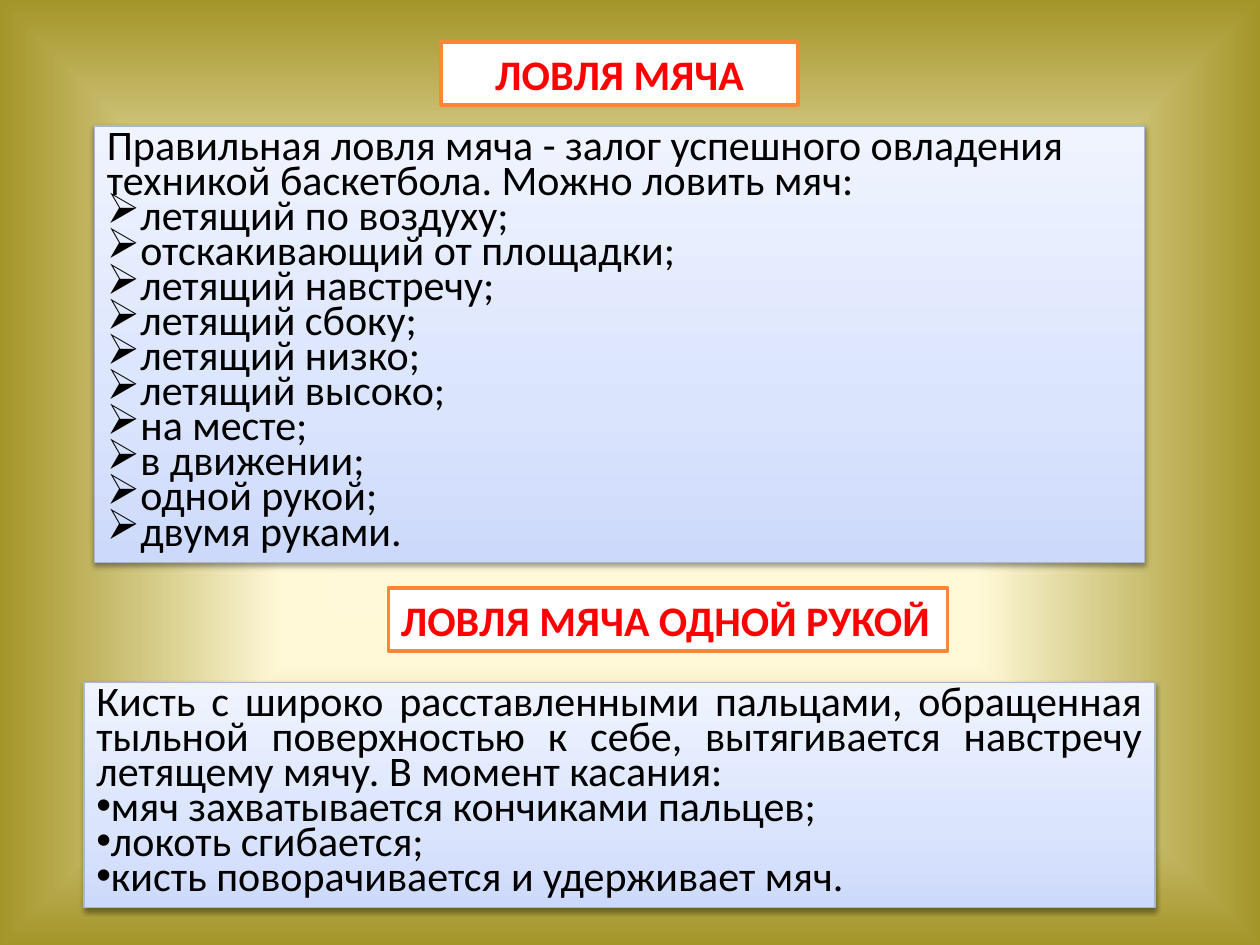
import pptx
import pptx.util
import pptx.oxml
import pptx.oxml.ns
import pptx.dml.color
import pptx.enum.shapes
import pptx.enum.text
from lxml import etree

Pt = pptx.util.Pt
qn = pptx.oxml.ns.qn
ALIGN = pptx.enum.text.PP_ALIGN
ANCHOR = pptx.enum.text.MSO_ANCHOR

COLORS = {
    "title": "FF0000", "title_fill": "FFFFFF", "title_line": "FE8637",
    "text": "000000", "panel_line": "A9B6D1", "shadow": "000000",
}
PANEL_STOPS = [(0, "CCD9FB"), (35, "DAE4FC"), (100, "F0F4FF")]
BACK_STOPS = [(0, "FFFADF"), (40, "FFF9D8"), (100, "A49528")]
ARROW = ("Wingdings", "Ø")
DOT = ("Arial", "•")

CATCH_INTRO = ("Правильная ловля мяча - залог успешного овладения техникой "
               "баскетбола. Можно ловить мяч:")
CATCH_ITEMS = [
    "летящий по воздуху;", "отскакивающий от площадки;", "летящий навстречу;",
    "летящий сбоку;", "летящий низко;", "летящий высоко;", "на месте;",
    "в движении;", "одной рукой;", "двумя руками.",
]
HAND_INTRO = ("Кисть с широко расставленными пальцами, обращенная тыльной "
              "поверхностью к себе, вытягивается навстречу летящему мячу. "
              "В момент касания:")
HAND_ITEMS = ["мяч захватывается кончиками пальцев;", "локоть сгибается;",
              "кисть поворачивается и удерживает мяч."]


def rgb(name):
    return pptx.dml.color.RGBColor.from_string(COLORS[name])


def gradient(stops, direction):
    gs = "".join(f'<a:gs pos="{pos * 1000}"><a:srgbClr val="{color}"/></a:gs>'
                 for pos, color in stops)
    return (f'<a:gradFill {pptx.oxml.ns.nsdecls("a")} rotWithShape="1">'
            f'<a:gsLst>{gs}</a:gsLst>{direction}</a:gradFill>')


def add_background(s):
    fill = gradient(BACK_STOPS, '<a:path path="shape"><a:fillToRect l="50000" '
                    't="50000" r="50000" b="50000"/></a:path>')
    bg = pptx.oxml.parse_xml(f'<p:bg {pptx.oxml.ns.nsdecls("p", "a")}><p:bgPr>'
                             f'{fill}<a:effectLst/></p:bgPr></p:bg>')
    s.element.find(qn("p:cSld")).insert(0, bg)


def add_box(s, box, line, width):
    sp = s.shapes.add_shape(pptx.enum.shapes.MSO_SHAPE.RECTANGLE,
                            *[Pt(v) for v in box])
    sp.line.color.rgb = rgb(line)
    sp.line.width = Pt(width)
    sp.shadow.inherit = False
    return sp


def set_font(p, color, bold=False):
    p.font.name = "Calibri"
    p.font.size = Pt(24)
    p.font.bold = bold
    p.font.color.rgb = rgb(color)


def set_bullet(p, bullet):
    font, char = bullet
    pr = p._p.get_or_add_pPr()
    etree.SubElement(pr, qn("a:buFont"), typeface=font)
    etree.SubElement(pr, qn("a:buChar"), char=char)


def add_title(s, box, text, align, wrap):
    sp = add_box(s, box, "title_line", 2)
    sp.fill.solid()
    sp.fill.fore_color.rgb = rgb("title_fill")
    tf = sp.text_frame
    tf.word_wrap = wrap
    tf.vertical_anchor = ANCHOR.TOP
    p = tf.paragraphs[0]
    p.text = text
    p.alignment = align
    set_font(p, "title", True)


def add_panel(s, box, intro, items, bullet, align):
    sp = add_box(s, box, "panel_line", 0.75)
    pr = sp.element.spPr
    fill = gradient(PANEL_STOPS, '<a:lin ang="16200000" scaled="1"/>')
    pr.find(qn("a:prstGeom")).addnext(pptx.oxml.parse_xml(fill))
    shadow = etree.SubElement(pr.find(qn("a:effectLst")), qn("a:outerShdw"),
                              blurRad=str(Pt(3.1)), dist=str(Pt(1.6)),
                              dir="5400000", rotWithShape="0")
    color = etree.SubElement(shadow, qn("a:srgbClr"), val=COLORS["shadow"])
    etree.SubElement(color, qn("a:alpha"), val="38000")
    tf = sp.text_frame
    tf.word_wrap = True
    tf.vertical_anchor = ANCHOR.MIDDLE
    for i, text in enumerate([intro, *items]):
        p = tf.add_paragraph() if i else tf.paragraphs[0]
        p.text = text
        p.alignment = align
        p.line_spacing = Pt(20)
        if i:
            set_bullet(p, bullet)
        set_font(p, "text")


def main():
    prs = pptx.Presentation()
    prs.slide_width, prs.slide_height = Pt(720), Pt(540)
    s = prs.slides.add_slide(prs.slide_layouts[6])
    add_background(s)
    add_title(s, (252, 24, 204, 36), "ЛОВЛЯ МЯЧА", ALIGN.CENTER, True)
    add_panel(s, (54, 72, 600, 249.5), CATCH_INTRO, CATCH_ITEMS, ARROW, ALIGN.LEFT)
    add_title(s, (222, 336, 319.5, 36), "ЛОВЛЯ МЯЧА ОДНОЙ РУКОЙ", ALIGN.LEFT, False)
    add_panel(s, (48, 390, 612, 128.5), HAND_INTRO, HAND_ITEMS, DOT, ALIGN.JUSTIFY)
    prs.save("out.pptx")


if __name__ == "__main__":
    main()
